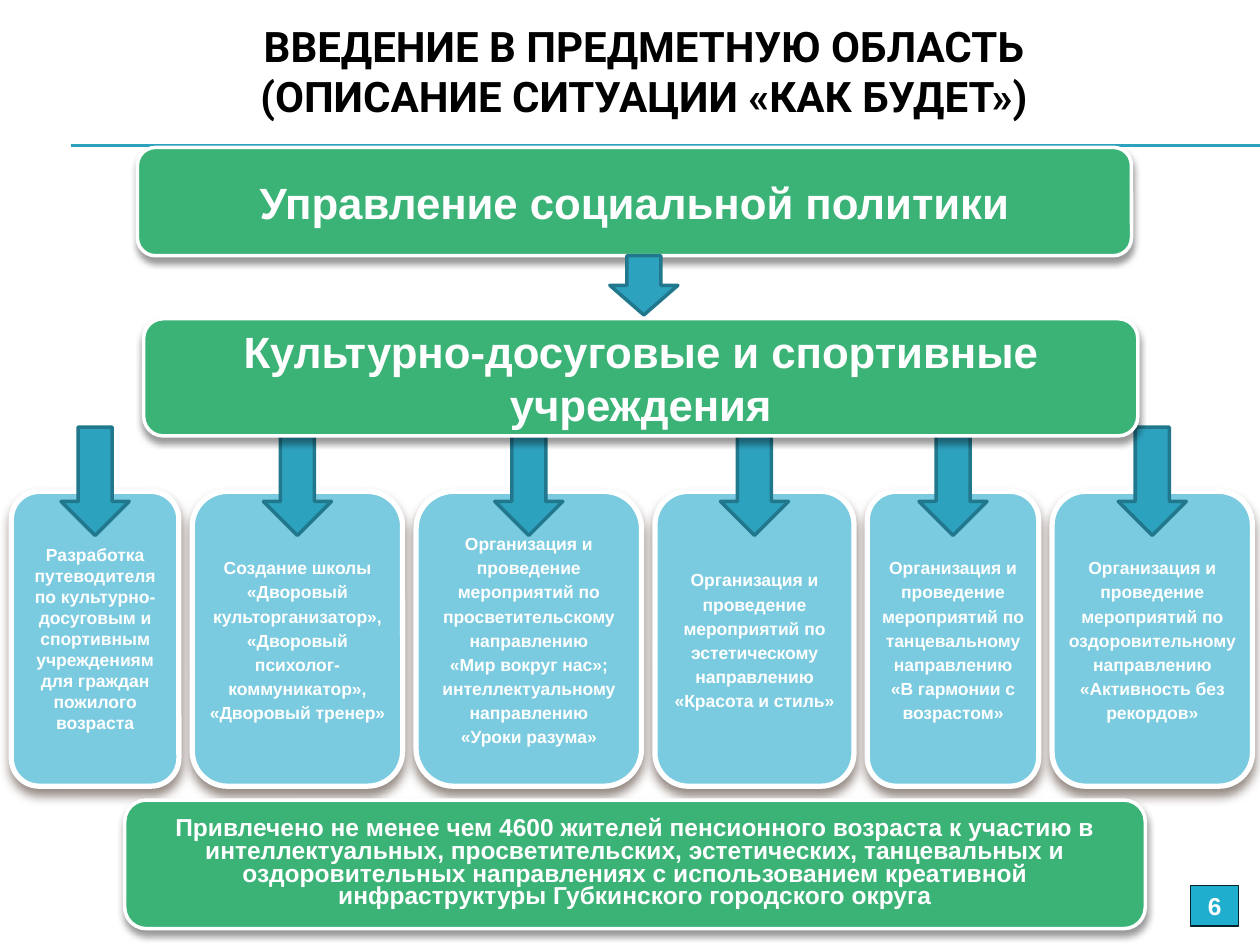
from lxml.etree import SubElement
from pptx import Presentation
from pptx.dml.color import RGBColor
from pptx.enum.shapes import MSO_CONNECTOR, MSO_SHAPE
from pptx.enum.text import MSO_ANCHOR, MSO_AUTO_SIZE, PP_ALIGN
from pptx.oxml.ns import qn
from pptx.util import Inches, Pt

WHITE = RGBColor(0xFF, 0xFF, 0xFF)
BLACK = RGBColor(0x00, 0x00, 0x00)
GREEN = RGBColor(0x3B, 0xB3, 0x77)
SKY = RGBColor(0x7A, 0xCB, 0xE0)
TEAL = RGBColor(0x2D, 0xA2, 0xBF)
DARK_TEAL = RGBColor(0x21, 0x78, 0x8D)
BADGE = RGBColor(0x1F, 0xAE, 0xCD)
BADGE_EDGE = RGBColor(0x06, 0x23, 0x29)
BROWN = RGBColor(0x4E, 0x3B, 0x30)

# Shadow: colour, opacity %, blur pt, distance pt
GREEN_SHADOW = (BLACK, 40, 4, 3)
SKY_SHADOW = (BROWN, 60, 6, 4)

TITLE = "ВВЕДЕНИЕ В ПРЕДМЕТНУЮ ОБЛАСТЬ\n(ОПИСАНИЕ СИТУАЦИИ «КАК БУДЕТ»)"
DEPARTMENT = "Управление социальной политики"
INSTITUTIONS = "Культурно-досуговые и спортивные учреждения"
RESULT = ("Привлечено не менее чем 4600 жителей пенсионного возраста к участию в "
          "интеллектуальных, просветительских, эстетических, танцевальных и "
          "оздоровительных направлениях с использованием креативной "
          "инфраструктуры Губкинского городского округа")
EVENTS = "Организация и проведение мероприятий по "
# Width, side inset, line spacing, space after, text
ACTIVITIES = [
    (1.33, 0.1, 1.0, 0, "Разработка путеводителя по культурно-досуговым и спортивным "
                        "учреждениям для граждан пожилого возраста"),
    (1.67, 0.04, 1.15, 10, "Создание школы «Дворовый культорганизатор», «Дворовый "
                           "психолог-коммуникатор», «Дворовый тренер»"),
    (1.79, 0.1, 1.15, 10, EVENTS + "просветительскому направлению\n«Мир вокруг нас»; "
                          "интеллектуальному направлению «Уроки разума»"),
    (1.58, 0.04, 1.15, 10, EVENTS + "эстетическому направлению «Красота и стиль»"),
    (1.36, 0.04, 1.15, 10, EVENTS + "танцевальному направлению\n«В гармонии с возрастом»"),
    (1.59, 0.04, 1.15, 10, EVENTS + "оздоровительному направлению «Активность без рекордов»"),
]
ROW_LEFT, ROW_RIGHT, ROW_TOP, ROW_HEIGHT = 0.09, 9.94, 3.9, 2.34
ARROW_WIDTH = 0.54


def add_box(slide, kind, at, fill, edge, edge_width, shadow=None):
    sp = slide.shapes.add_shape(kind, *map(Inches, at))
    sp.fill.solid()
    sp.fill.fore_color.rgb = fill
    sp.line.color.rgb = edge
    sp.line.width = Pt(edge_width)
    sp.shadow.inherit = False
    if shadow:
        color, opacity, blur, distance = shadow
        effects = sp._element.spPr.find(qn("a:effectLst"))
        outer = SubElement(effects, qn("a:outerShdw"), blurRad=str(Pt(blur)),
                           dist=str(Pt(distance)), dir="5400000", rotWithShape="0")
        clr = SubElement(outer, qn("a:srgbClr"), val=str(color))
        SubElement(clr, qn("a:alpha"), val=str(opacity * 1000))
    return sp


def write(sp, text, size, color=WHITE, font="Arial", side=0.1, spacing=None, after=None,
          anchor=MSO_ANCHOR.MIDDLE):
    tf = sp.text_frame
    tf.word_wrap = True
    tf.vertical_anchor = anchor
    tf.margin_left = tf.margin_right = Inches(side)
    p = tf.paragraphs[0]
    p.text = text
    p.alignment = PP_ALIGN.CENTER
    p.line_spacing = spacing
    if after:
        p.space_after = Pt(after)
    p.font.size = Pt(size)
    p.font.bold = True
    p.font.name = font
    p.font.color.rgb = color


def add_banner(slide, at, text, size, spacing=None):
    sp = add_box(slide, MSO_SHAPE.ROUNDED_RECTANGLE, at, GREEN, WHITE, 2, GREEN_SHADOW)
    write(sp, text, size, spacing=spacing)


def add_arrow(slide, center, top, height):
    at = (center - ARROW_WIDTH / 2, top, ARROW_WIDTH, height)
    add_box(slide, MSO_SHAPE.DOWN_ARROW, at, TEAL, DARK_TEAL, 2)


def add_rule(slide, y):
    line = slide.shapes.add_connector(MSO_CONNECTOR.STRAIGHT, Inches(0.56), Inches(y),
                                      Inches(10), Inches(y))
    line.line.color.rgb = TEAL
    line.line.width = Pt(0.75)
    SubElement(line._element.spPr, qn("a:effectLst"))


def add_activities(slide):
    """Draw the row of activity boxes with equal gaps and return their centres."""
    widths = [activity[0] for activity in ACTIVITIES]
    gap = (ROW_RIGHT - ROW_LEFT - sum(widths)) / (len(widths) - 1)
    left, centers = ROW_LEFT, []
    for width, side, spacing, after, text in ACTIVITIES:
        sp = add_box(slide, MSO_SHAPE.ROUNDED_RECTANGLE, (left, ROW_TOP, width, ROW_HEIGHT),
                     SKY, WHITE, 3, SKY_SHADOW)
        write(sp, text, 10, side=side, spacing=spacing, after=after)
        centers.append(left + width / 2)
        left += width + gap
    return centers


def main():
    prs = Presentation()
    prs.slide_width, prs.slide_height = Inches(10), Inches(7.5)
    slide = prs.slides.add_slide(prs.slide_layouts[5])

    title = slide.shapes.title
    title.left, title.top, title.width, title.height = map(Inches, (0.19, 0.11, 9.84, 0.91))
    write(title, TITLE, 24, BLACK, "Roboto", spacing=1.0, anchor=MSO_ANCHOR.TOP)
    title.text_frame.auto_size = MSO_AUTO_SIZE.SHAPE_TO_FIT_TEXT

    for y in (1.15, 1.16):
        add_rule(slide, y)
    badge = add_box(slide, MSO_SHAPE.RECTANGLE, (9.45, 7.03, 0.38, 0.32), BADGE, BADGE_EDGE, 0.75)
    write(badge, "6", 14)

    centers = add_activities(slide)
    add_banner(slide, (0.99, 6.35, 8.1, 1.02), RESULT, 14, Pt(13))
    add_banner(slide, (1.09, 1.17, 7.89, 0.86), DEPARTMENT, 25)
    add_arrow(slide, 5.11, 2.03, 0.47)
    for center in centers:
        add_arrow(slide, center, 3.39, 0.86)
    add_banner(slide, (1.14, 2.53, 7.89, 0.93), INSTITUTIONS, 25)

    prs.save("out.pptx")


if __name__ == "__main__":
    main()
